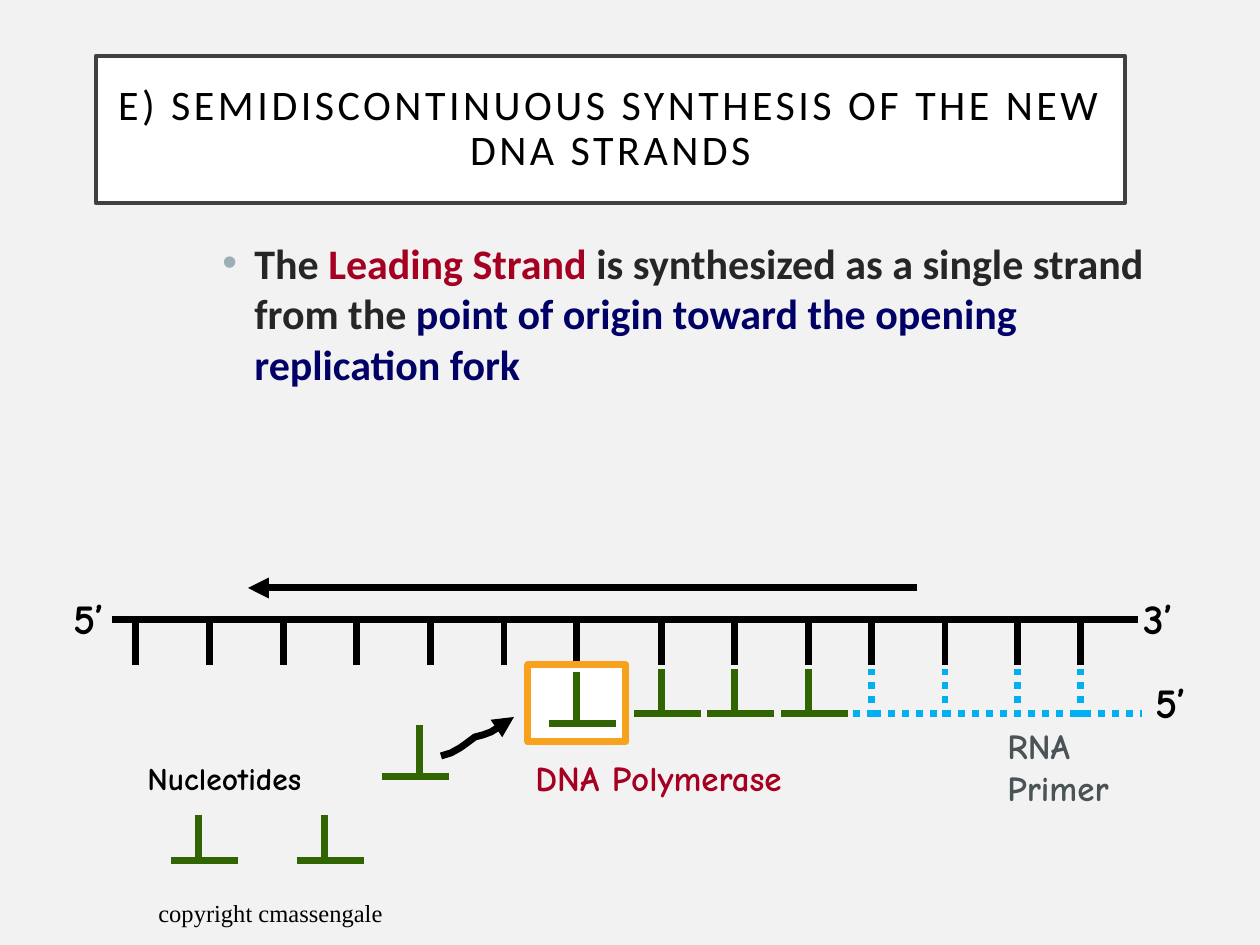
from lxml import etree
from pptx import Presentation
from pptx.dml.color import RGBColor
from pptx.enum.dml import MSO_LINE
from pptx.enum.shapes import MSO_CONNECTOR, MSO_SHAPE
from pptx.enum.text import MSO_ANCHOR, PP_ALIGN
from pptx.oxml.ns import qn
from pptx.util import Pt

EMU_PER_PX = 914400 / 126
LINE_PT = 4
STRAIGHT, RECT = MSO_CONNECTOR.STRAIGHT, MSO_SHAPE.RECTANGLE
DOTTED = MSO_LINE.ROUND_DOT
TOP, MIDDLE = MSO_ANCHOR.TOP, MSO_ANCHOR.MIDDLE
LEFT, CENTER = PP_ALIGN.LEFT, PP_ALIGN.CENTER

BACKGROUND = RGBColor(0xF2, 0xF2, 0xF2)
WHITE = RGBColor(0xFF, 0xFF, 0xFF)
BLACK = RGBColor(0x00, 0x00, 0x00)
FRAME = RGBColor(0x40, 0x40, 0x40)
BODY = RGBColor(0x26, 0x26, 0x26)
RED = RGBColor(0xA5, 0x00, 0x21)
NAVY = RGBColor(0x00, 0x00, 0x66)
BULLET = RGBColor(0x9B, 0xAF, 0xB5)
GREEN = RGBColor(0x31, 0x65, 0x01)
BLUE = RGBColor(0x00, 0xB0, 0xF0)
SLATE = RGBColor(0x4A, 0x53, 0x56)
ORANGE = RGBColor(0xF6, 0xA2, 0x1D)

HEADING_FONT, LABEL_FONT, FOOTER_FONT = "Calibri", "Comic Neue", "Times New Roman"


def px(n):
    return round(n * EMU_PER_PX)


def write(p, text, font=LABEL_FONT, size=24, color=BLACK, bold=False, spacing=None):
    r = p.add_run()
    r.text = text
    r.font.name, r.font.size, r.font.bold = font, Pt(size), bold
    r.font.color.rgb = color
    if spacing:
        r._r.get_or_add_rPr().set("spc", str(spacing * 100))


def add_bullet(p, color, indent):
    pPr = p._p.get_or_add_pPr()
    pPr.set("marL", str(px(indent)))
    pPr.set("indent", str(-px(indent)))
    clr = etree.SubElement(pPr, qn("a:buClr"))
    etree.SubElement(clr, qn("a:srgbClr"), val=str(color))
    etree.SubElement(pPr, qn("a:buFont"), typeface="Arial")
    etree.SubElement(pPr, qn("a:buChar"), char="•")


class Diagram:
    def __init__(self, slide):
        self.s = slide

    def style_line(self, sp, color, width=LINE_PT, dash=None, arrow=False):
        sp.line.color.rgb = color
        sp.line.width = Pt(width)
        if dash:
            sp.line.dash_style = dash
        if arrow:
            etree.SubElement(sp.line._get_or_add_ln(), qn("a:tailEnd"), type="triangle")

    def line(self, x1, y1, x2, y2, color, dash=None, arrow=False):
        sp = self.s.shapes.add_connector(STRAIGHT, px(x1), px(y1), px(x2), px(y2))
        self.style_line(sp, color, dash=dash, arrow=arrow)
        etree.SubElement(sp._element.spPr, qn("a:effectLst"))

    def rect(self, x, y, w, h, color, width=LINE_PT):
        sp = self.s.shapes.add_shape(RECT, px(x), px(y), px(w), px(h))
        sp.shadow.inherit = False
        sp.fill.solid()
        sp.fill.fore_color.rgb = WHITE
        self.style_line(sp, color, width)
        return sp

    def curve_arrow(self, points, color):
        points = [(px(x), px(y)) for x, y in points]
        builder = self.s.shapes.build_freeform(*points[0])
        builder.add_line_segments(points[1:], close=False)
        sp = builder.convert_to_shape()
        sp.shadow.inherit = False
        sp.fill.background()
        self.style_line(sp, color, arrow=True)

    def text_frame(self, x, y, w, h, anchor=TOP):
        tf = self.s.shapes.add_textbox(px(x), px(y), px(w), px(h)).text_frame
        tf.word_wrap = True
        tf.vertical_anchor = anchor
        return tf

    def label(self, x, y, w, h, *lines, anchor=TOP, **style):
        tf = self.text_frame(x, y, w, h, anchor)
        for i, text in enumerate(lines):
            p = tf.add_paragraph() if i else tf.paragraphs[0]
            p.alignment = LEFT
            write(p, text, **style)

    def nucleotide(self, x, top, bar_y, left=28):
        self.line(x, top + 48, x, top, GREEN)
        self.line(x - left, bar_y, x - left + 67, bar_y, GREEN)


def main():
    prs = Presentation()
    prs.slide_width, prs.slide_height = px(1260), px(945)
    s = prs.slides.add_slide(prs.slide_layouts[6])
    s.background.fill.solid()
    s.background.fill.fore_color.rgb = BACKGROUND
    d = Diagram(s)

    # Title
    tf = d.rect(96, 56, 1029, 147, FRAME, 2.5).text_frame
    tf.word_wrap = True
    tf.vertical_anchor = MIDDLE
    p = tf.paragraphs[0]
    p.alignment, p.line_spacing = CENTER, 0.9
    write(p, "E) SEMIDISCONTINUOUS SYNTHESIS OF THE NEW DNA STRANDS",
          font=HEADING_FONT, spacing=2)

    # Body text
    p = d.text_frame(210, 231, 955, 609).paragraphs[0]
    p.space_before = Pt(10)
    add_bullet(p, BULLET, 32)
    for text, color in (
        ("The ", BODY),
        ("Leading Strand", RED),
        (" is synthesized as a single strand from the ", BODY),
        ("point of origin toward the opening replication fork", NAVY),
    ):
        write(p, text, font=HEADING_FONT, color=color, bold=True)

    # Template strand: free bases, polymerase site, paired bases, primer bases
    free = [136, 210, 284, 357, 431, 504]
    site = 577
    paired = [662, 735, 809]
    primer = [872, 945, 1018, 1081]
    d.line(1138, 620, 112, 620, BLACK)
    for x in free + [site] + paired + primer:
        d.line(x, 665, x, 616, BLACK)
    d.line(917, 588, 248, 588, BLACK, arrow=True)

    # RNA primer
    d.line(874, 714, 1142, 714, BLUE, DOTTED)
    d.line(874, 714, 847, 714, BLUE, DOTTED)
    for x in primer:
        d.line(x, 717, x, 669, BLUE, DOTTED)

    # DNA polymerase and the nucleotides
    d.rect(528, 665, 98, 77, ORANGE)
    for x in paired:
        d.nucleotide(x, 669, 714)
    d.nucleotide(site, 672, 724)
    d.nucleotide(420, 725, 777, left=38)
    for x in (199, 325):
        d.nucleotide(x, 815, 861)
    d.curve_arrow([(441, 756), (451, 753), (460, 748), (467, 743), (475, 737),
                   (483, 735), (491, 732), (499, 727), (507, 722), (514, 717)], BLACK)

    # Labels
    d.label(995, 718, 134, 96, "RNA", "Primer", size=20, color=SLATE, bold=True)
    d.label(523, 750, 305, 54, "DNA Polymerase", size=20, color=RED, bold=True)
    d.label(135, 753, 202, 50, "Nucleotides", size=18, bold=True)
    for text, x, y in (("3’", 1131, 586), ("5’", 61, 586), ("5’", 1143, 670)):
        d.label(x, y, 60, 63, text, bold=True)

    # Footer
    d.label(146, 891, 627, 44, "copyright cmassengale", anchor=MIDDLE,
            font=FOOTER_FONT, size=14)

    prs.save("out.pptx")


if __name__ == "__main__":
    main()
